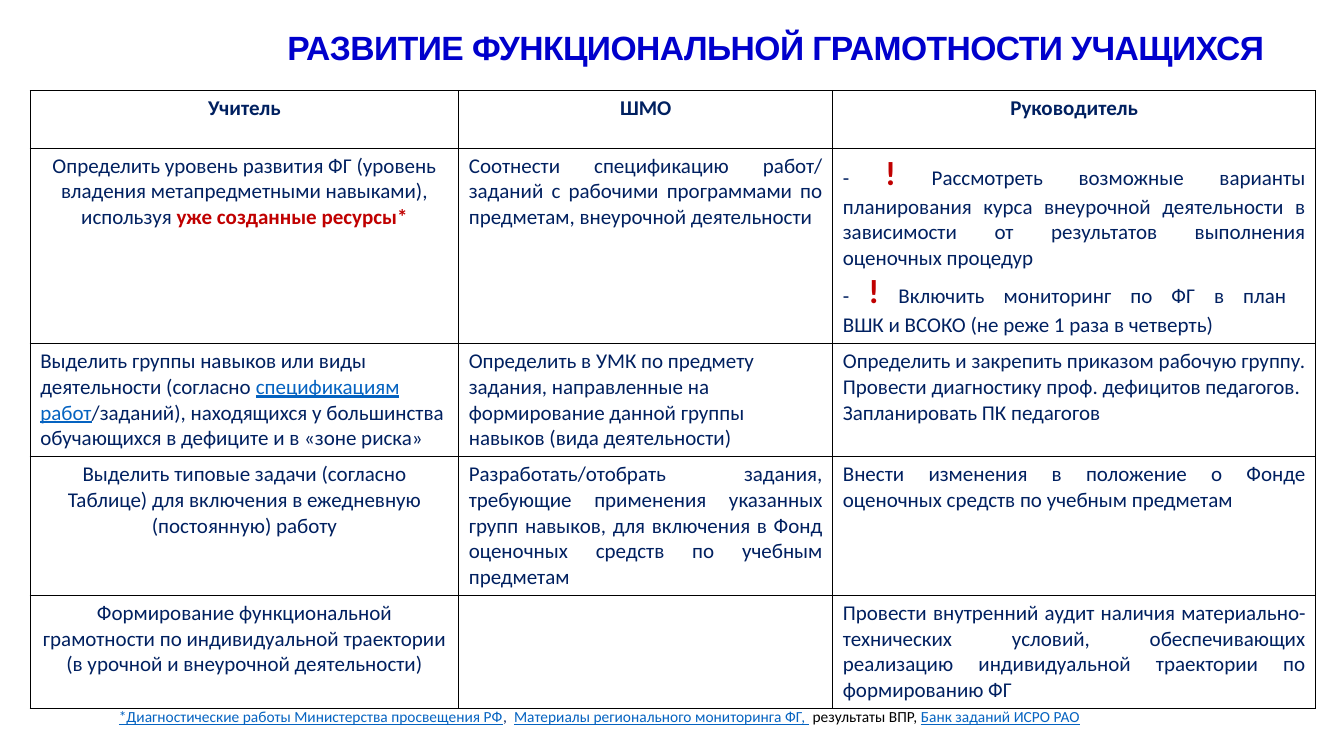
from lxml import etree
from pptx import Presentation
from pptx.dml.color import RGBColor
from pptx.enum.text import MSO_ANCHOR, PP_ALIGN
from pptx.oxml.ns import qn
from pptx.util import Inches, Pt

LEFT, CENTER, JUSTIFY = PP_ALIGN.LEFT, PP_ALIGN.CENTER, PP_ALIGN.JUSTIFY
MIDDLE = MSO_ANCHOR.MIDDLE
BLUE = RGBColor(0x00, 0x00, 0xCC)
NAVY = RGBColor(0x00, 0x20, 0x60)
RED = RGBColor(0xC0, 0x00, 0x00)
LINK = RGBColor(0x05, 0x63, 0xC1)
BLACK = RGBColor(0, 0, 0)

STYLES = {
    "title": dict(name="Arial", size=Pt(24), bold=True, color=BLUE),
    "head": dict(size=Pt(15), bold=True, color=NAVY),
    "body": dict(size=Pt(15), bold=False, color=NAVY),
    "strong": dict(size=Pt(15), bold=True, color=RED),
    "mark": dict(size=Pt(24), bold=True, color=RED),
    "link": dict(size=Pt(15), underline=True, color=LINK),
    "note_link": dict(size=Pt(11), underline=True, color=LINK),
    "note_comma": dict(size=Pt(11), color=NAVY),
    "note": dict(size=Pt(11), color=BLACK),
}

TITLE = "РАЗВИТИЕ ФУНКЦИОНАЛЬНОЙ ГРАМОТНОСТИ УЧАЩИХСЯ"
HEADERS = ["Учитель", "ШМО", "Руководитель"]
ROWS = [
    [
        (CENTER, [[("Определить уровень развития ФГ (уровень владения метапредметными "
                    "навыками), используя ", "body"),
                   ("уже созданные ресурсы*", "strong")]]),
        (JUSTIFY, ["Соотнести спецификацию работ/ заданий с рабочими программами "
                   "по предметам, внеурочной деятельности "]),
        (JUSTIFY, [
            [("- ", "body"), ("!", "mark"),
             (" Рассмотреть возможные варианты планирования курса внеурочной деятельности "
              "в зависимости от результатов выполнения оценочных процедур", "body")],
            [("- ", "body"), ("!", "mark"),
             (" Включить мониторинг по ФГ в план \n"
              "ВШК и ВСОКО (не реже 1 раза в четверть) ", "body")],
        ]),
    ],
    [
        (LEFT, [[("Выделить группы навыков или виды деятельности (согласно ", "body"),
                 ("спецификациям работ", "link"),
                 ("/заданий), находящихся у большинства обучающихся в дефиците "
                  "и в «зоне риска»", "body")]]),
        (LEFT, ["Определить в УМК по предмету задания, направленные на формирование "
                "данной группы навыков (вида деятельности)"]),
        (JUSTIFY, ["Определить и закрепить приказом рабочую группу. ",
                   "Провести диагностику проф. дефицитов педагогов.",
                   "Запланировать ПК педагогов"]),
    ],
    [
        (CENTER, ["Выделить типовые задачи (согласно Таблице) для включения "
                  "в ежедневную (постоянную) работу"]),
        (JUSTIFY, ["Разработать/отобрать задания, требующие применения указанных групп "
                   "навыков, для включения в Фонд оценочных средств по учебным предметам"]),
        (JUSTIFY, ["Внести изменения в положение о Фонде оценочных средств "
                   "по учебным предметам"]),
    ],
    [
        (CENTER, ["Формирование функциональной грамотности по индивидуальной траектории "
                  "(в урочной и внеурочной деятельности)"]),
        None,
        (JUSTIFY, ["Провести внутренний аудит наличия материально-технических условий, "
                   "обеспечивающих реализацию индивидуальной траектории "
                   "по формированию ФГ"]),
    ],
]
FOOTNOTE = [
    ("*Диагностические работы Министерства просвещения РФ", "note_link"),
    (",  ", "note_comma"),
    ("Материалы регионального мониторинга ФГ, ", "note_link"),
    (" результаты ВПР, ", "note"),
    ("Банк заданий ИСРО РАО", "note_link"),
]
COL_WIDTHS = [4.25, 3.71, 4.79]
ROW_HEIGHTS = [0.57, 1.94, 1.12, 1.37, 1.12]


def add_run(p, text, style):
    r = p.add_run()
    r.text = text
    for key, value in {"name": "Calibri", **STYLES[style]}.items():
        if key == "color":
            r.font.color.rgb = value
        else:
            setattr(r.font, key, value)
    return r


def fill_text(tf, paragraphs, align, style="body"):
    for i, runs in enumerate(paragraphs):
        p = tf.add_paragraph() if i else tf.paragraphs[0]
        p.alignment = align
        for text, run_style in [(runs, style)] if isinstance(runs, str) else runs:
            for j, line in enumerate(text.split("\n")):
                if j:
                    p.add_line_break()
                add_run(p, line, run_style)


def set_borders(cell):
    props = cell._tc.get_or_add_tcPr()
    for i, side in enumerate(("lnL", "lnR", "lnT", "lnB")):
        ln = etree.Element(qn("a:" + side), w=str(Pt(1)))
        fill = etree.SubElement(ln, qn("a:solidFill"))
        etree.SubElement(fill, qn("a:srgbClr"), val=str(BLACK))
        props.insert(i, ln)


def add_title(s):
    sp = s.shapes.title
    sp.left, sp.top, sp.width, sp.height = map(Inches, (2.75, 0.09, 10.3, 0.81))
    tf = sp.text_frame
    tf.vertical_anchor = MIDDLE
    p = tf.paragraphs[0]
    p.alignment, p.line_spacing = LEFT, 0.9
    r = add_run(p, TITLE, "title")
    r.font._element.set("spc", "-40")


def add_plan(s):
    grid = [[(CENTER, [(h)]) for h in HEADERS]] + ROWS
    frame = s.shapes.add_table(len(grid), len(HEADERS), Inches(0.3), Inches(0.9),
                               Inches(sum(COL_WIDTHS)), Inches(sum(ROW_HEIGHTS)))
    table = frame.table
    table.first_row = table.horz_banding = False
    for col, width in zip(table.columns, COL_WIDTHS):
        col.width = Inches(width)
    for i, (row, height) in enumerate(zip(table.rows, ROW_HEIGHTS)):
        row.height = Inches(height)
        for cell, content in zip(row.cells, grid[i]):
            cell.fill.background()
            set_borders(cell)
            if content:
                align, paragraphs = content
                fill_text(cell.text_frame, paragraphs, align, "body" if i else "head")


def add_footnote(s):
    sp = s.shapes.add_textbox(*map(Inches, (1.08, 6.97, 11.21, 0.47)))
    sp.text_frame.word_wrap = True
    fill_text(sp.text_frame, [FOOTNOTE], LEFT)


def main():
    prs = Presentation()
    prs.slide_width, prs.slide_height = Inches(13.33), Inches(7.5)
    s = prs.slides.add_slide(prs.slide_layouts[5])
    add_title(s)
    add_plan(s)
    add_footnote(s)
    prs.save("out.pptx")


if __name__ == "__main__":
    main()
